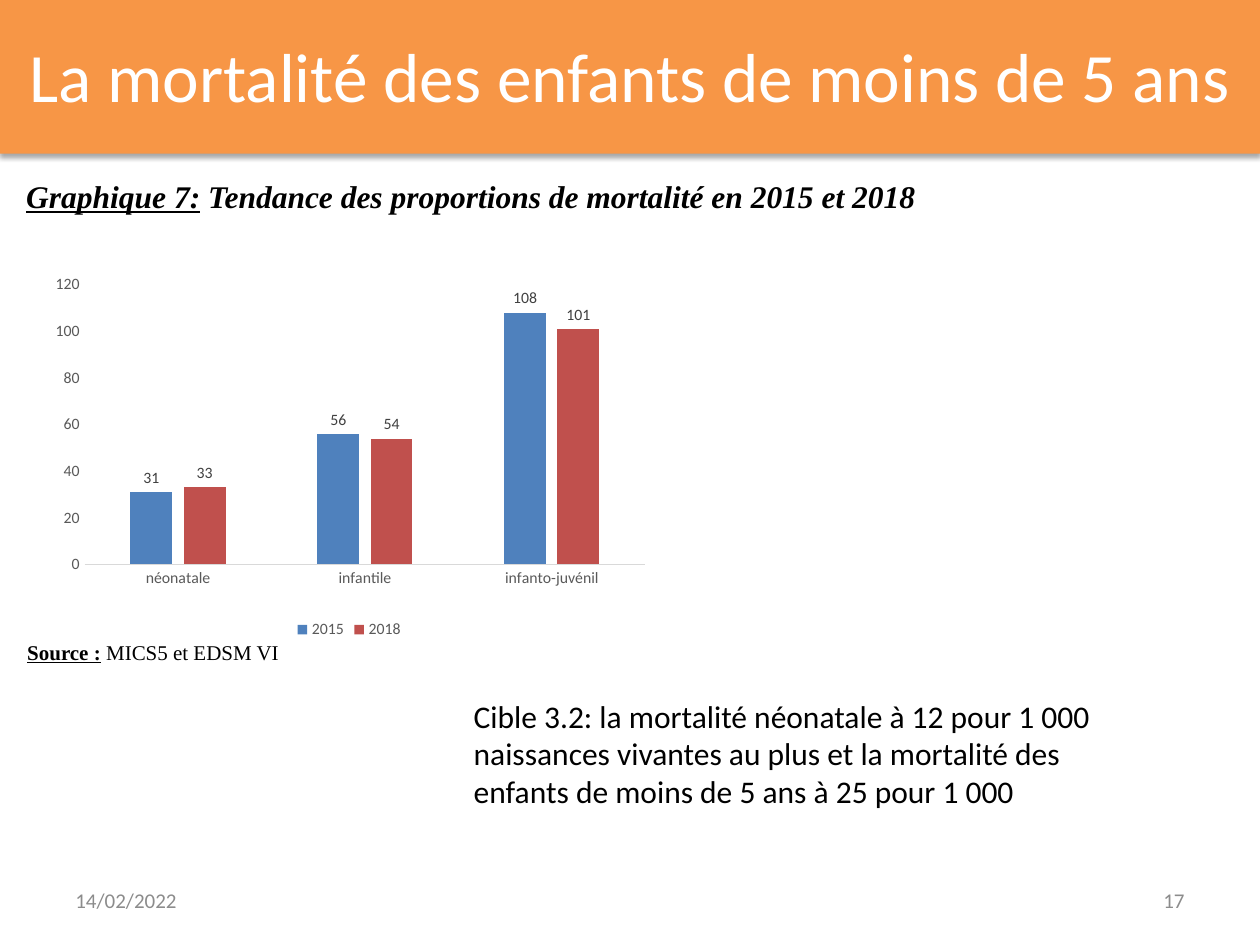
from dataclasses import dataclass

from lxml import etree
from pptx import Presentation
from pptx import util as u
from pptx.chart.data import CategoryChartData
from pptx.dml.color import RGBColor
from pptx.enum import chart as charts
from pptx.enum import text
from pptx.oxml import ns


@dataclass(frozen=True)
class Theme:
    sans: str = "Calibri"
    serif: str = "Times New Roman"
    banner: str = "F79646"
    light: str = "FFFFFF"
    dark: str = "000000"
    footer: str = "8C8C8C"
    axis_text: str = "595959"
    axis_line: str = "D9D9D9"
    label: str = "404040"
    series: tuple = ("4F81BD", "C0504D")
    title_size: float = 39.6
    body_size: float = 18
    small_size: float = 12
    chart_size: float = 9


@dataclass(frozen=True)
class Box:
    left: float
    top: float
    width: float
    height: float

    def inner(self, left, top, width, height):
        return Box(self.left + left, self.top + top, width, height)

    def lengths(self):
        return [u.Cm(value) for value in (self.left, self.top, self.width, self.height)]


THEME = Theme()


def style_font(font, size, color, name=THEME.sans, **flags):
    font.name = name
    font.size = u.Pt(size)
    font.color.rgb = RGBColor.from_string(color)
    for flag, value in flags.items():
        setattr(font, flag, value)


def add_text(slide, box, content, size, color=THEME.dark):
    shape = slide.shapes.add_textbox(*box.lengths())
    shape.text_frame.word_wrap = True
    shape.text_frame.text = content
    paragraph = shape.text_frame.paragraphs[0]
    style_font(paragraph.runs[0].font, size, color)
    return shape.text_frame, paragraph


def add_labelled_text(slide, box, label, content, size, emphasis, italic):
    paragraph = add_text(slide, box, label, size)[1]
    paragraph.add_run().text = content
    for run, bold, underline in zip(paragraph.runs, (True, emphasis), (True, False)):
        style_font(run.font, size, THEME.dark, THEME.serif,
                   bold=bold, italic=italic, underline=underline)
    return paragraph


def add_shadow(shape, color, opacity, blur, distance):
    effects = etree.SubElement(shape._element.spPr, ns.qn("a:effectLst"))
    shadow = etree.SubElement(
        effects, ns.qn("a:outerShdw"), blurRad=str(u.Pt(blur)),
        dist=str(u.Pt(distance)), dir="5400000", rotWithShape="0")
    tint = etree.SubElement(shadow, ns.qn("a:srgbClr"), val=color)
    etree.SubElement(tint, ns.qn("a:alpha"), val=str(opacity * 1000))


def place_title(slide, box):
    title = slide.shapes.title
    title.left, title.top, title.width, title.height = box.lengths()
    title.fill.solid()
    title.fill.fore_color.rgb = RGBColor.from_string(THEME.banner)
    add_shadow(title, THEME.dark, 35, 3.1, 1.8)
    frame = title.text_frame
    frame.text = "La mortalité des enfants de moins de 5 ans"
    frame.vertical_anchor = text.MSO_ANCHOR.MIDDLE
    frame.paragraphs[0].alignment = text.PP_ALIGN.CENTER
    style_font(frame.paragraphs[0].runs[0].font, THEME.title_size, THEME.light)


def set_plot_layout(chart, x, y, w, h):
    plot_area = chart._chartSpace.chart.plotArea
    for old in plot_area.findall(ns.qn("c:layout")):
        plot_area.remove(old)
    layout = etree.Element(ns.qn("c:layout"))
    manual = etree.SubElement(layout, ns.qn("c:manualLayout"))
    settings = dict(layoutTarget="inner", xMode="edge", yMode="edge", x=x, y=y, w=w, h=h)
    for name, value in settings.items():
        etree.SubElement(manual, ns.qn("c:" + name), val=str(value))
    plot_area.insert(0, layout)


def place_chart(slide, box):
    data = CategoryChartData()
    data.categories = ["néonatale", "infantile", "infanto-juvénil"]
    data.add_series("2015", (31, 56, 108))
    data.add_series("2018", (33, 54, 101))
    chart = slide.shapes.add_chart(
        charts.XL_CHART_TYPE.COLUMN_CLUSTERED, *box.lengths(), data).chart
    style_font(chart.font, THEME.chart_size, THEME.axis_text)
    chart.has_title = False
    chart.has_legend = True
    chart.legend.position = charts.XL_LEGEND_POSITION.BOTTOM
    chart.legend.include_in_layout = False
    style_font(chart.legend.font, THEME.chart_size, THEME.axis_text)
    set_plot_layout(chart, 0.08, 0.05, 0.89, 0.74)

    for axis in (chart.category_axis, chart.value_axis):
        axis.has_major_gridlines = False
        axis.major_tick_mark = charts.XL_TICK_MARK.NONE
        axis.minor_tick_mark = charts.XL_TICK_MARK.NONE
        style_font(axis.tick_labels.font, THEME.chart_size, THEME.axis_text)
    category_line = chart.category_axis.format.line
    category_line.color.rgb = RGBColor.from_string(THEME.axis_line)
    category_line.width = u.Pt(0.75)
    chart.value_axis.format.line.fill.background()
    chart.value_axis.minimum_scale = 0
    chart.value_axis.maximum_scale = 120
    chart.value_axis.major_unit = 20

    plot = chart.plots[0]
    plot.vary_by_categories = False
    plot.gap_width = 219
    plot.overlap = -27
    for series, color in zip(plot.series, THEME.series):
        series.format.fill.solid()
        series.format.fill.fore_color.rgb = RGBColor.from_string(color)
        labels = series.data_labels
        labels.show_value = True
        labels.position = charts.XL_LABEL_POSITION.OUTSIDE_END
        style_font(labels.font, THEME.chart_size, THEME.label)


def place_figure(slide, box):
    source = add_labelled_text(
        slide, box.inner(0.02, 9.28, 12.88, 0.79), "Source :", " MICS5 et EDSM VI",
        THEME.small_size, emphasis=False, italic=False)
    source.alignment = text.PP_ALIGN.JUSTIFY
    source.line_spacing = 1.07
    source.space_after = u.Pt(8)
    place_chart(slide, box.inner(0.41, 1.91, 12.7, 7.62))
    add_labelled_text(
        slide, box.inner(0, 0, box.width, 1.02), "Graphique 7:",
        " Tendance des proportions de mortalité en 2015 et 2018",
        THEME.body_size, emphasis=True, italic=True)


def place_target(slide, box):
    add_text(slide, box,
             "Cible 3.2: la mortalité néonatale à 12 pour 1 000 naissances vivantes "
             "au plus et la mortalité des enfants de moins de 5 ans à 25 pour 1 000",
             THEME.body_size)


def place_footer(slide, box):
    width = 5.93
    entries = (("14/02/2022", 0, text.PP_ALIGN.LEFT),
               ("17", box.width - width, text.PP_ALIGN.RIGHT))
    for content, left, alignment in entries:
        frame, paragraph = add_text(slide, box.inner(left, 0, width, box.height),
                                    content, THEME.small_size, THEME.footer)
        frame.vertical_anchor = text.MSO_ANCHOR.MIDDLE
        paragraph.alignment = alignment


def main():
    presentation = Presentation()
    presentation.slide_width = u.Cm(25.4)
    presentation.slide_height = u.Cm(19.05)
    slide = presentation.slides.add_slide(presentation.slide_layouts[5])
    place_title(slide, Box(0, -0.08, 25.4, 3.18))
    place_figure(slide, Box(0.28, 3.45, 22.61, 10.07))
    place_target(slide, Box(9.3, 13.92, 13.41, 2.57))
    place_footer(slide, Box(1.27, 17.65, 22.86, 1.01))
    presentation.save("out.pptx")


if __name__ == "__main__":
    main()
